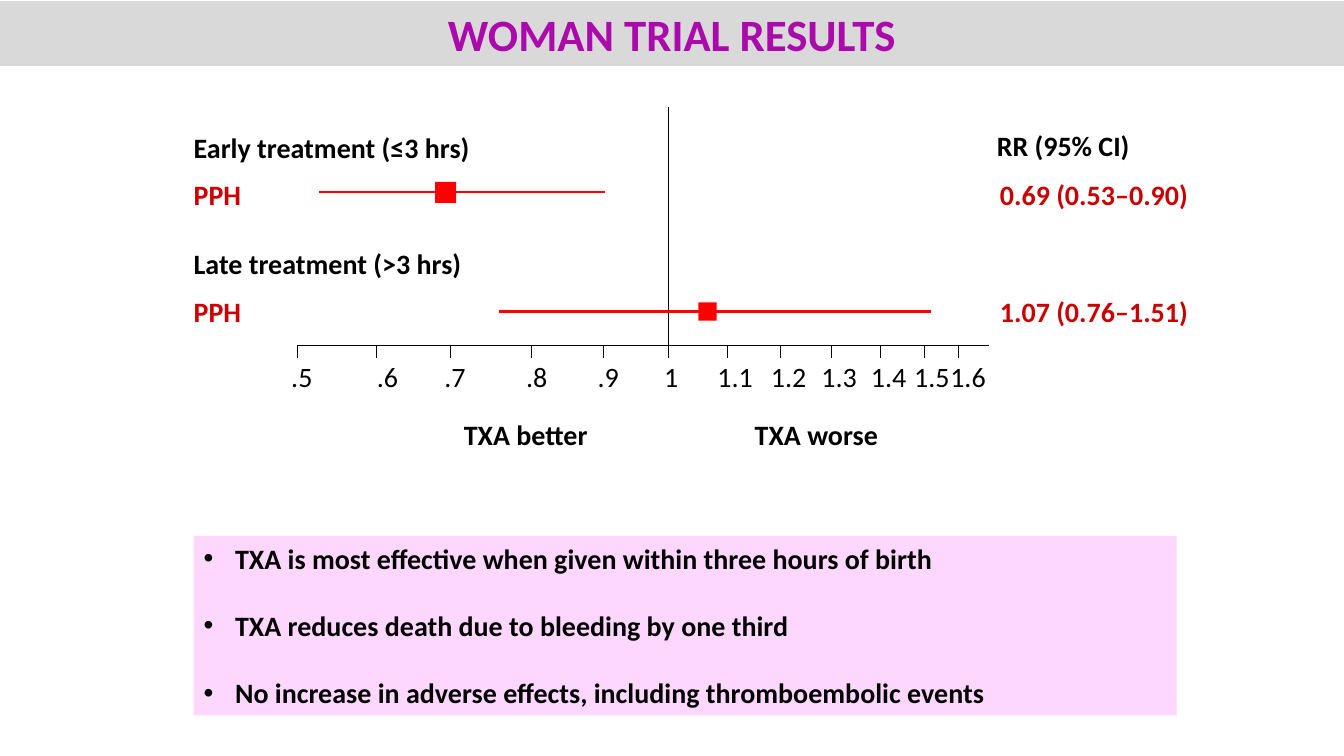
import pptx
import pptx.util
import pptx.dml.color
import pptx.enum.shapes
import pptx.enum.text
import pptx.oxml
import pptx.oxml.ns
from pptx.util import Cm

BLACK = pptx.dml.color.RGBColor(0x00, 0x00, 0x00)
RED = pptx.dml.color.RGBColor(0xFF, 0x00, 0x00)
DARK_RED = pptx.dml.color.RGBColor(0xCC, 0x00, 0x00)
PURPLE = pptx.dml.color.RGBColor(0xAB, 0x09, 0xAB)
GREY = pptx.dml.color.RGBColor(0xD9, 0xD9, 0xD9)
PINK = pptx.dml.color.RGBColor(0xFD, 0xD7, 0xFD)
ALIGN = pptx.enum.text.PP_ALIGN

TITLE = "WOMAN TRIAL RESULTS"
FINDINGS = [
    "TXA is most effective when given within three hours of birth",
    "TXA reduces death due to bleeding by one third",
    "No increase in adverse effects, including thromboembolic events",
]
GROUPS = [
    {"heading": "Early treatment (≤3 hrs)", "top": 3.28, "risk": "0.69 (0.53–0.90)",
     "interval": (8.05, 15.24), "estimate": 11.23, "line_y": 4.85, "size": 0.53},
    {"heading": "Late treatment (>3 hrs)", "top": 6.22, "risk": "1.07 (0.76–1.51)",
     "interval": (12.57, 23.47), "estimate": 17.83, "line_y": 7.85, "size": 0.46},
]
TICKS = [
    (".5", 7.49, 7.34), (".6", 9.5, 9.5), (".7", 11.35, 11.2), (".8", 13.39, 13.26),
    (".9", 15.21, 15.06), ("1", 16.84, 16.74), ("1.1", 18.34, 18.08),
    ("1.2", 19.66, 19.43), ("1.3", 20.96, 20.7), ("1.4", 22.2, 21.95),
    ("1.5", 23.29, 23.04), ("1.6", 24.16, 23.95),
]
CAPTIONS = [
    ("TXA better", 10.64, 10.52, 4.17, ALIGN.RIGHT),
    ("TXA worse", 19.02, 10.52, 4.17, ALIGN.LEFT),
    ("RR (95% CI)", 25.12, 3.23, 4.5, ALIGN.LEFT),
]
LEFT = 4.88
AXIS_Y, AXIS_START, AXIS_END = 8.7, 7.52, 24.92
TICK_LENGTH, NO_EFFECT_X, NO_EFFECT_TOP = 0.33, 16.84, 2.69
RISK_TAB = 20.32


def format_text(para, size, color, bold):
    for span in para.runs:
        span.font.name = "Calibri"
        span.font.size = pptx.util.Pt(size)
        span.font.bold = bold
        span.font.color.rgb = color


def place(shape, left, top, width, height):
    shape.left, shape.top = Cm(left), Cm(top)
    shape.width, shape.height = Cm(width), Cm(height)


def add_xml(para, xml):
    para._p.get_or_add_pPr().append(
        pptx.oxml.parse_xml(xml.replace("/>", f" {pptx.oxml.ns.nsdecls('a')}/>", 1)
                            if xml.endswith("/>") and xml.count("<") == 1
                            else xml.replace(">", f" {pptx.oxml.ns.nsdecls('a')}>", 1)))


def add_label(page, text, left, top, width, color=BLACK, bold=True,
              align=ALIGN.LEFT, tab=None):
    box = page.shapes.add_textbox(Cm(left), Cm(top), Cm(width), Cm(0.8))
    frame = box.text_frame
    frame.word_wrap = True
    frame.margin_left = frame.margin_right = frame.margin_top = frame.margin_bottom = 0
    para = frame.paragraphs[0]
    para.text = text
    para.alignment = align
    if tab:
        add_xml(para, f'<a:tabLst><a:tab pos="{Cm(tab)}" algn="l"/></a:tabLst>')
    format_text(para, 20, color, bold)


def add_line(page, x1, y1, x2, y2, color=BLACK, width=0.75):
    line = page.shapes.add_connector(
        pptx.enum.shapes.MSO_CONNECTOR.STRAIGHT, Cm(x1), Cm(y1), Cm(x2), Cm(y2))
    line.line.color.rgb = color
    line.line.width = pptx.util.Pt(width)
    line._element.spPr.append(
        pptx.oxml.parse_xml(f"<a:effectLst {pptx.oxml.ns.nsdecls('a')}/>"))


def add_title(page):
    title = page.shapes.title
    place(title, 0, 0.03, 33.87, 1.63)
    title.fill.solid()
    title.fill.fore_color.rgb = GREY
    frame = title.text_frame
    frame.text = TITLE
    frame.auto_size = pptx.enum.text.MSO_AUTO_SIZE.NONE
    frame.vertical_anchor = pptx.enum.text.MSO_ANCHOR.MIDDLE
    frame.paragraphs[0].alignment = ALIGN.CENTER
    format_text(frame.paragraphs[0], 32, PURPLE, True)


def add_findings(page):
    body = page.placeholders[1]
    place(body, LEFT, 13.51, 24.77, 4.52)
    body.fill.solid()
    body.fill.fore_color.rgb = PINK
    frame = body.text_frame
    frame.text = "\n".join(FINDINGS)
    frame.auto_size = pptx.enum.text.MSO_AUTO_SIZE.NONE
    frame.vertical_anchor = pptx.enum.text.MSO_ANCHOR.TOP
    for index, para in enumerate(frame.paragraphs):
        properties = para._p.get_or_add_pPr()
        properties.set("marL", str(Cm(0.79)))
        properties.set("indent", str(Cm(-0.79)))
        add_xml(para, '<a:buFont typeface="Arial"/>')
        add_xml(para, '<a:buChar char="•"/>')
        para.space_before = pptx.util.Pt(24 if index else 0)
        format_text(para, 20, BLACK, True)


def add_group(page, group):
    add_label(page, group["heading"], LEFT, group["top"], 7.5)
    add_label(page, "PPH\t" + group["risk"], LEFT, group["top"] + 1.19, 26,
              DARK_RED, tab=RISK_TAB)
    start, end = group["interval"]
    y, size = group["line_y"], group["size"]
    add_line(page, start, y, end, y, RED, 1.5)
    marker = page.shapes.add_shape(
        pptx.enum.shapes.MSO_SHAPE.RECTANGLE, Cm(group["estimate"] - size / 2),
        Cm(y - size / 2), Cm(size), Cm(size))
    marker.shadow.inherit = False
    marker.fill.solid()
    marker.fill.fore_color.rgb = RED
    marker.line.fill.background()


def add_axis(page):
    add_line(page, AXIS_START, AXIS_Y, AXIS_END, AXIS_Y)
    add_line(page, NO_EFFECT_X, NO_EFFECT_TOP, NO_EFFECT_X, AXIS_Y)
    for text, x, label_left in TICKS:
        add_line(page, x, AXIS_Y, x, AXIS_Y + TICK_LENGTH)
        add_label(page, text, label_left, 9.07, 1.09, bold=False)


def main():
    """Build the slide of trial results with its forest plot."""
    deck = pptx.Presentation()
    deck.slide_width, deck.slide_height = Cm(33.87), Cm(19.05)
    page = deck.slides.add_slide(deck.slide_layouts[1])
    add_title(page)
    add_findings(page)
    add_axis(page)
    for group in GROUPS:
        add_group(page, group)
    for text, left, top, width, align in CAPTIONS:
        add_label(page, text, left, top, width, align=align)
    deck.save("out.pptx")


if __name__ == "__main__":
    main()
